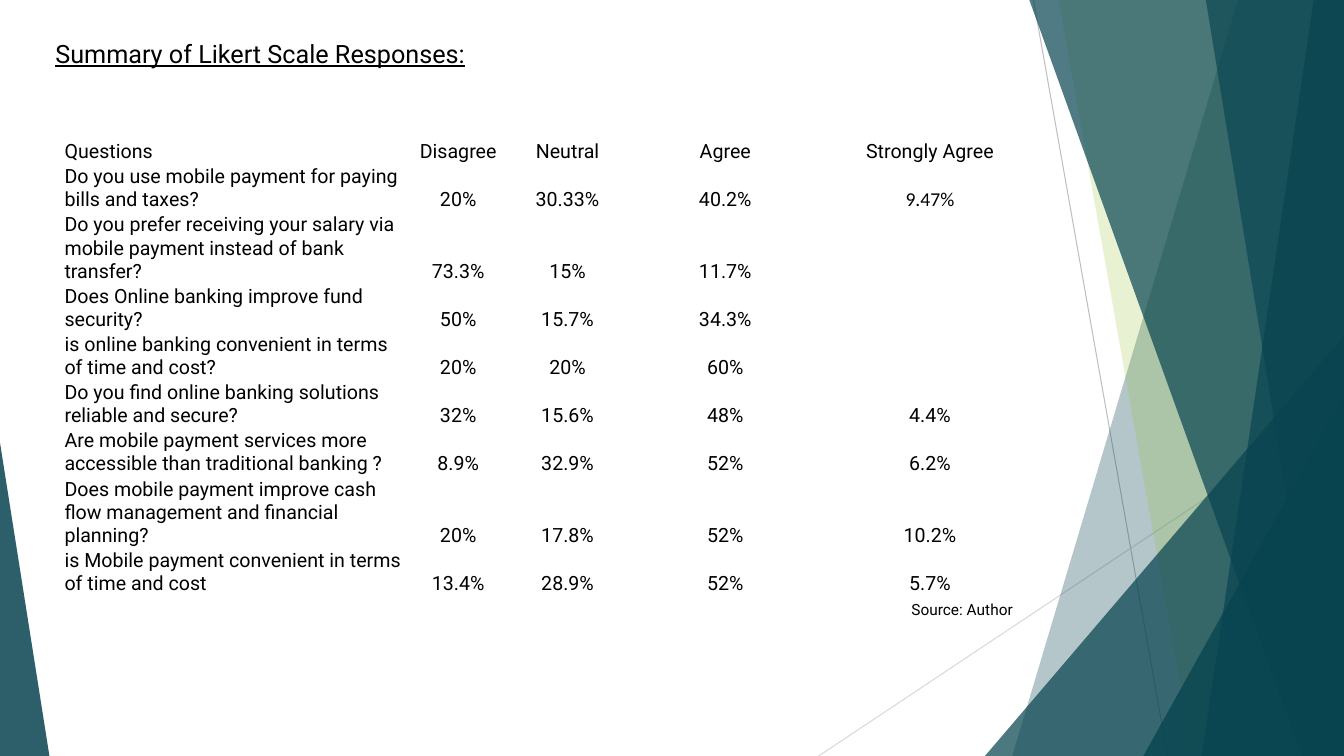
from lxml.etree import SubElement
from pptx import Presentation
from pptx.dml.color import RGBColor
from pptx.enum.shapes import MSO_CONNECTOR, MSO_SHAPE
from pptx.enum.text import MSO_ANCHOR, PP_ALIGN
from pptx.oxml import parse_xml
from pptx.oxml.ns import nsdecls, qn
from pptx.util import Inches, Pt

TEAL = RGBColor(0x08, 0x44, 0x50)
GREEN = RGBColor(0x90, 0xC2, 0x26)
GREY = RGBColor(0xBF, 0xBF, 0xBF)
PALE_GREY = RGBColor(0xD9, 0xD9, 0xD9)
WHITE = RGBColor(0xFF, 0xFF, 0xFF)
BLACK = RGBColor(0x00, 0x00, 0x00)

COLUMN_SHARES = [3.38, 1.07, 1.1, 2.03, 2.03]
LINE_HEIGHTS = {1: 0.3, 2: 0.47, 3: 0.71}
RESPONSES = [
    (1, "Questions", "Disagree", "Neutral", "Agree", "Strongly Agree"),
    (2, "Do you use mobile payment for paying bills and taxes?",
     "20%", "30.33%", "40.2%", "9.47%"),
    (3, "Do you prefer receiving your salary via mobile payment instead of bank transfer?",
     "73.3%", "15%", "11.7%", ""),
    (2, "Does Online banking improve fund security?", "50%", "15.7%", "34.3%", ""),
    (2, "is online banking convenient in terms of time and cost?",
     "20%", "20%", "60%", ""),
    (2, "Do you find online banking solutions reliable and secure?",
     "32%", "15.6%", "48%", "4.4%"),
    (2, "Are mobile payment services more accessible than traditional banking ?",
     "8.9%", "32.9%", "52%", "6.2%"),
    (3, "Does mobile payment improve cash flow management and financial planning?",
     "20%", "17.8%", "52%", "10.2%"),
    (2, "is Mobile payment convenient in terms of time and cost",
     "13.4%", "28.9%", "52%", "5.7%"),
]


def add_run(p, text, size, font="Roboto"):
    r = p.add_run()
    r.text = text
    r.font.size = Pt(size)
    r.font.name = font
    r.font.color.rgb = BLACK
    return r


def paint(sp, color, opacity):
    sp.shadow.inherit = False
    sp.fill.solid()
    sp.fill.fore_color.rgb = color
    sp.line.fill.background()
    clr = sp.fill._xPr.find(qn("a:solidFill"))[0]
    SubElement(clr, qn("a:alpha")).set("val", str(opacity * 1000))


def add_backdrop(slide, box):
    left, top, width, height = box

    def at(x, y):
        return left + int(width * x / 100), top + int(height * y / 100)

    def ray(start, end, color):
        line = slide.shapes.add_connector(MSO_CONNECTOR.STRAIGHT, *at(*start), *at(*end))
        line.line.color.rgb = color
        line.line.width = Pt(0.75)
        SubElement(line._element.spPr, qn("a:effectLst"))

    def facet(top_x, bottom_x, color, opacity):
        builder = slide.shapes.build_freeform(*at(top_x, 0))
        builder.add_line_segments([at(100, 0), at(100, 100), at(bottom_x, 100)])
        paint(builder.convert_to_shape(), color, opacity)

    def corner(x, y, right, apex, opacity):
        x0, y0 = at(x, y)
        x1, y1 = at(right, 100)
        sp = slide.shapes.add_shape(MSO_SHAPE.ISOSCELES_TRIANGLE, x0, y0, x1 - x0, y1 - y0)
        sp.adjustments[0] = apex
        paint(sp, TEAL, opacity)

    ray((76.9, 0), (86.87, 100), GREY)
    ray((100, 53.73), (60.92, 100), PALE_GREY)
    facet(92.12, 75.32, TEAL, 30)
    facet(78.77, 88.75, GREEN, 20)
    corner(73.29, 44.4, 100, 1, 72)
    facet(76.59, 96.85, TEAL, 70)
    facet(97.75, 89.42, TEAL, 70)
    facet(89.72, 98.87, TEAL, 65)
    corner(85.07, 52.4, 100, 1, 80)
    corner(0, 58.53, 3.68, 0, 85)


def add_label(slide, box, text, size, underline=False):
    tf = slide.shapes.add_textbox(*box).text_frame
    tf.word_wrap = True
    r = add_run(tf.paragraphs[0], text, size)
    if underline:
        r.font.underline = True


def style_cell(cell):
    cell.fill.solid()
    cell.fill.fore_color.rgb = WHITE
    tcPr = cell._tc.get_or_add_tcPr()
    for i, side in enumerate("LRTB"):
        tcPr.insert(i, parse_xml(
            f'<a:ln{side} {nsdecls("a")} w="12700"><a:solidFill>'
            f'<a:srgbClr val="{WHITE}"/></a:solidFill></a:ln{side}>'))


def fill_cell(cell, text, centred, font):
    cell.vertical_anchor = MSO_ANCHOR.BOTTOM
    cell.margin_left = cell.margin_right = cell.margin_top = Inches(0.01)
    cell.margin_bottom = 0
    p = cell.text_frame.paragraphs[0]
    if centred:
        p.alignment = PP_ALIGN.CENTER
    add_run(p, text, 14, font)


def add_responses(slide, box):
    left, top, width, height = box
    table = slide.shapes.add_table(
        len(RESPONSES), len(COLUMN_SHARES), left, top, width, height).table
    table.first_row = table.horz_banding = False
    for column, share in zip(table.columns, COLUMN_SHARES):
        column.width = int(width * share / sum(COLUMN_SHARES))
    total = sum(LINE_HEIGHTS[row[0]] for row in RESPONSES)
    for r, (lines, *texts) in enumerate(RESPONSES):
        table.rows[r].height = int(height * LINE_HEIGHTS[lines] / total)
        for c, text in enumerate(texts):
            cell = table.cell(r, c)
            style_cell(cell)
            if text:
                fill_cell(cell, text, c > 0, "Calibri" if text == "9.47%" else "Roboto")


def main():
    prs = Presentation()
    prs.slide_width, prs.slide_height = Inches(13.33), Inches(7.5)
    w, h = prs.slide_width, prs.slide_height

    def share(x, y, width, height):
        return int(w * x / 100), int(h * y / 100), int(w * width / 100), int(h * height / 100)

    slide = prs.slides.add_slide(prs.slide_layouts[6])
    add_backdrop(slide, (0, 0, w, h))
    add_label(slide, share(3.38, 4.4, 50, 5.4), "Summary of Likert Scale Responses:", 18, True)
    add_label(slide, share(67.07, 78.67, 32.9, 3.8), "Source: Author", 11)
    add_responses(slide, share(4.73, 17.6, 72.09, 60.67))
    prs.save("out.pptx")


if __name__ == "__main__":
    main()
